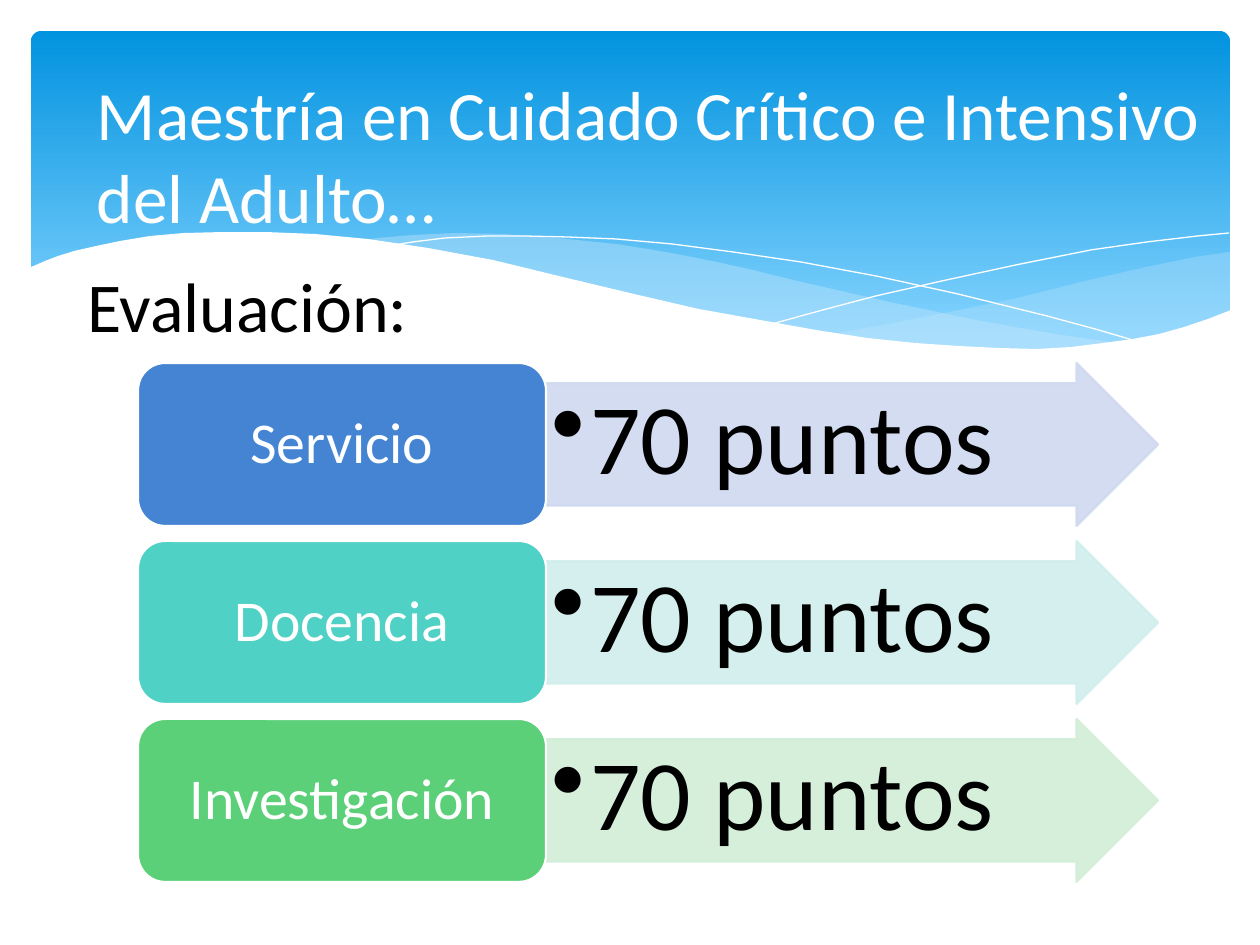
from lxml.etree import SubElement
from pptx import Presentation
from pptx.dml.color import RGBColor
from pptx.enum.shapes import MSO_SHAPE
from pptx.enum.text import MSO_ANCHOR, MSO_AUTO_SIZE, PP_ALIGN
from pptx.oxml.ns import qn
from pptx.util import Emu, Inches, Pt

SCALE = 914400 / 126
FONT = "Calibri"
WHITE = RGBColor(0xFF, 0xFF, 0xFF)
BLACK = RGBColor(0x00, 0x00, 0x00)
SKY_DARK = RGBColor(0x02, 0x93, 0xE0)
SKY_LIGHT = RGBColor(0x83, 0xD3, 0xFE)
MIST = RGBColor(0xC6, 0xE7, 0xFC)
BLUE = RGBColor(0x45, 0x84, 0xD3)
BLUE_PALE = RGBColor(0xCF, 0xD9, 0xEF)
TEAL = RGBColor(0x50, 0xD1, 0xC5)
TEAL_PALE = RGBColor(0xD0, 0xEE, 0xEC)
GREEN = RGBColor(0x5B, 0xD0, 0x78)
GREEN_PALE = RGBColor(0xD2, 0xEE, 0xD7)

RIGHT_SWELL = [
    (1229, 252), (1195, 257), (1142, 268), (1085, 281), (1014, 299), (949, 312),
    (889, 324), (833, 334), (888, 342), (939, 347), (984, 349), (1026, 350),
    (1064, 349), (1099, 346), (1130, 340), (1160, 334), (1187, 326), (1213, 318),
    (1230, 311), (1230, 252),
]
MIDDLE_SWELL = [
    (1125, 344), (1055, 334), (976, 320), (890, 302), (793, 280), (753, 270),
    (717, 262), (682, 255), (648, 249), (616, 244), (557, 238), (503, 234),
    (455, 233), (413, 235), (377, 238), (360, 241), (407, 247), (456, 255),
    (509, 266), (566, 280), (619, 292), (668, 302), (713, 312), (757, 321),
    (799, 329), (838, 335), (876, 340), (910, 345), (943, 348), (974, 349),
    (1003, 350), (1043, 350), (1080, 349), (1104, 347),
]
FALLING_CREST = [
    (389, 246), (413, 242), (445, 238), (488, 236), (524, 236), (567, 237),
    (616, 239), (672, 244), (733, 252), (801, 262), (876, 276), (958, 294),
    (1047, 316), (1095, 329), (1143, 343),
]
RISING_CREST = [
    (772, 324), (823, 310), (876, 296), (942, 281), (1016, 265), (1091, 250),
    (1147, 242), (1198, 236), (1229, 233),
]
FOREGROUND_WAVE = [
    (1231, 310), (1208, 319), (1184, 327), (1159, 334), (1133, 339), (1103, 343),
    (1071, 347), (1037, 349), (999, 348), (959, 346), (915, 343), (867, 338),
    (816, 330), (760, 320), (699, 309), (634, 294), (563, 277), (493, 260),
    (428, 248), (368, 239), (315, 234), (266, 232), (223, 232), (184, 233),
    (150, 236), (120, 241), (96, 246), (74, 251), (58, 256), (45, 261),
    (29, 268), (29, 415), (1231, 415),
]
CRITERIA = [
    ("Servicio", BLUE, BLUE_PALE),
    ("Docencia", TEAL, TEAL_PALE),
    ("Investigación", GREEN, GREEN_PALE),
]


def px(length):
    return Emu(round(length * SCALE))


def write(frame, text, size, color, align=PP_ALIGN.LEFT, anchor=MSO_ANCHOR.TOP,
          margins=(13, 6), spacing=1.0, bullet_indent=0, wrap=True):
    frame.word_wrap = wrap
    frame.vertical_anchor = anchor
    frame.margin_left = frame.margin_right = px(margins[0])
    frame.margin_top = frame.margin_bottom = px(margins[1])
    paragraph = frame.paragraphs[0]
    paragraph.alignment = align
    paragraph.line_spacing = spacing
    run = paragraph.add_run()
    run.text = text
    run.font.name = FONT
    run.font.size = Pt(size)
    run.font.color.rgb = color
    if bullet_indent:
        properties = paragraph._p.get_or_add_pPr()
        properties.set("marL", str(px(bullet_indent)))
        properties.set("indent", str(-px(bullet_indent)))
        SubElement(properties, qn("a:buChar"), char="•")


class SlideBuilder:
    def __init__(self, slide):
        self.slide = slide
        self.shapes = slide.shapes

    def paint(self, shape, fill=None, line=None, width=1.25, opacity=100):
        shape.shadow.inherit = False
        if fill is None:
            shape.fill.background()
        else:
            shape.fill.solid()
            shape.fill.fore_color.rgb = fill
        if line is None:
            shape.line.fill.background()
        else:
            shape.line.color.rgb = line
            shape.line.width = Pt(width)
        if opacity < 100:
            for color in shape.element.spPr.iter(qn("a:srgbClr")):
                SubElement(color, qn("a:alpha"), val=str(opacity * 1000))

    def preset(self, kind, box, adjustments=(), **style):
        shape = self.shapes.add_shape(kind, *map(px, box))
        for index, value in enumerate(adjustments):
            shape.adjustments[index] = value
        self.paint(shape, **style)
        return shape

    def banner(self, box):
        banner = self.preset(MSO_SHAPE.ROUNDED_RECTANGLE, box, [0.03])
        banner.fill.gradient()
        banner.fill.gradient_angle = 270
        stops = banner.fill.gradient_stops
        for stop, position, color in zip(stops, (0, 0.9), (SKY_DARK, SKY_LIGHT)):
            stop.position = position
            stop.color.rgb = color

    def curve(self, points, closed=True, **style):
        builder = self.shapes.build_freeform(*points[0], scale=SCALE)
        builder.add_line_segments(points[1:], close=closed)
        self.paint(builder.convert_to_shape(), **style)

    def text_box(self, box, text, **style):
        frame = self.shapes.add_textbox(*map(px, box)).text_frame
        write(frame, text, **style)
        frame.auto_size = MSO_AUTO_SIZE.SHAPE_TO_FIT_TEXT

    def title(self, box, text, **style):
        title = self.shapes.title
        title.left, title.top, title.width, title.height = map(px, box)
        write(title.text_frame, text, **style)
        title.text_frame.auto_size = MSO_AUTO_SIZE.NONE
        self.shapes.element.append(title.element)

    def criterion(self, top, label, color, pale):
        height = 163
        arrow = self.preset(MSO_SHAPE.RIGHT_ARROW, (546, top, 612, height),
                            [0.75, 0.5], fill=pale, line=pale, opacity=90)
        write(arrow.text_frame, "70 puntos", size=57, color=BLACK,
              margins=(5, 5), spacing=0.9, bullet_indent=39)
        card = self.preset(MSO_SHAPE.ROUNDED_RECTANGLE, (138, top, 408, height),
                           fill=color, line=WHITE)
        write(card.text_frame, label, size=33, color=WHITE, align=PP_ALIGN.CENTER,
              anchor=MSO_ANCHOR.MIDDLE, margins=(18, 9), spacing=0.9)


def main():
    deck = Presentation()
    deck.slide_width, deck.slide_height = Inches(10), Inches(7.5)
    page = SlideBuilder(deck.slides.add_slide(deck.slide_layouts[5]))

    page.banner((31, 31, 1199, 340))
    page.curve(RIGHT_SWELL, fill=MIST, opacity=29)
    page.curve(MIDDLE_SWELL, fill=MIST, opacity=40)
    for crest in (FALLING_CREST, RISING_CREST):
        page.curve(crest, closed=False, line=WHITE, width=0)
    page.curve(FOREGROUND_WAVE, fill=WHITE)

    for row, criterion in enumerate(CRITERIA):
        page.criterion(363 + row * 178, *criterion)

    page.text_box((74, 256, 349, 97), "Evaluación:", size=40, color=BLACK, wrap=False)
    page.title((84, 68, 1134, 173), "Maestría en Cuidado Crítico e Intensivo del Adulto…",
               size=39.6, color=WHITE, anchor=MSO_ANCHOR.MIDDLE)
    deck.save("out.pptx")


if __name__ == "__main__":
    main()
